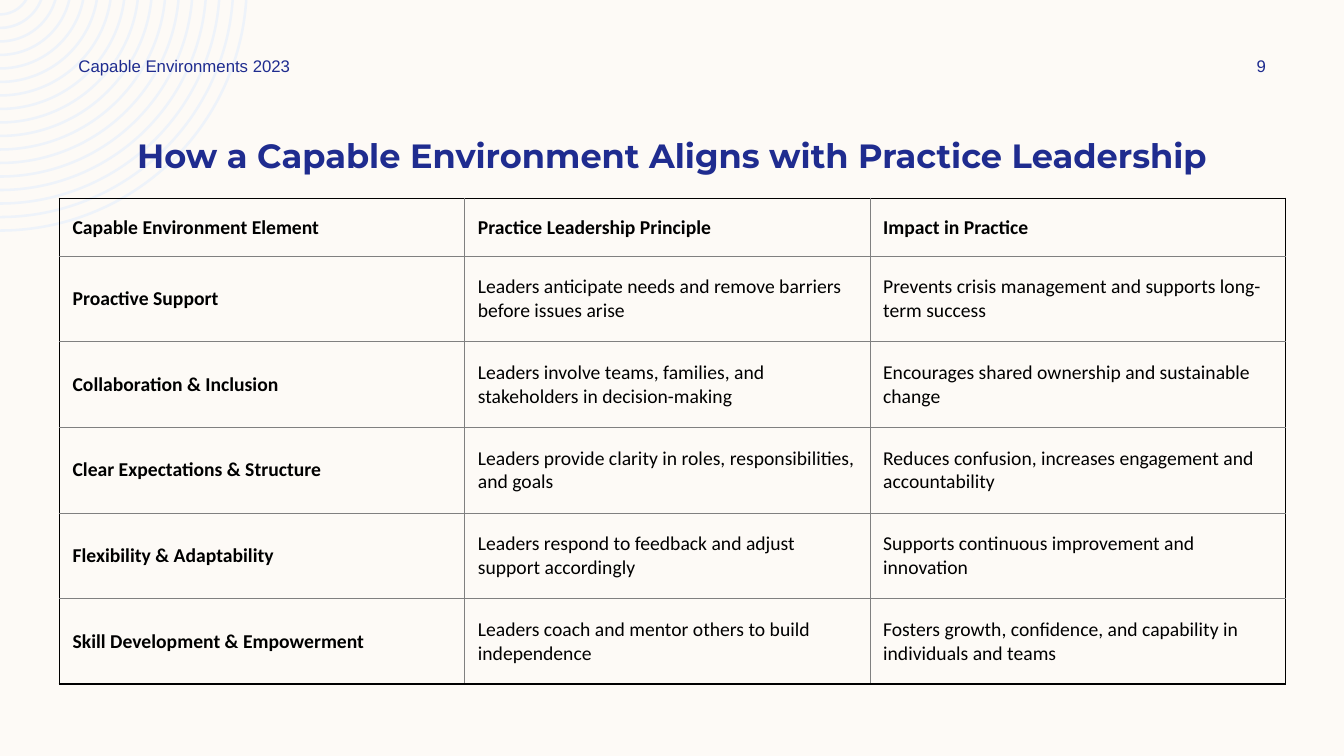
import math

import pptx
import pptx.dml.color
import pptx.enum.text
import pptx.oxml
import pptx.oxml.ns
import pptx.util

Inches = pptx.util.Inches
Pt = pptx.util.Pt
ALIGN = pptx.enum.text.PP_ALIGN
ANCHOR = pptx.enum.text.MSO_ANCHOR
NS = pptx.oxml.ns.nsdecls("a")

COLS = [4.02, 4.02, 4.12]
ROWS = [0.57] + [0.85] * 5
CONTENT = [
    ("Capable Environment Element", "Practice Leadership Principle", "Impact in Practice"),
    ("Proactive Support",
     "Leaders anticipate needs and remove barriers before issues arise",
     "Prevents crisis management and supports long-term success"),
    ("Collaboration & Inclusion",
     "Leaders involve teams, families, and stakeholders in decision-making",
     "Encourages shared ownership and sustainable change"),
    ("Clear Expectations & Structure",
     "Leaders provide clarity in roles, responsibilities, and goals",
     "Reduces confusion, increases engagement and accountability"),
    ("Flexibility & Adaptability",
     "Leaders respond to feedback and adjust support accordingly",
     "Supports continuous improvement and innovation"),
    ("Skill Development & Empowerment",
     "Leaders coach and mentor others to build independence",
     "Fosters growth, confidence, and capability in individuals and teams"),
]


def rgb(value):
    return pptx.dml.color.RGBColor.from_string(value)


class Deck:
    NAVY, CREAM, PALE, BLACK, GREY = "1F2C8F", "FDFAF6", "EEF3FA", "000000", "808080"

    def __init__(self):
        self.prs = pptx.Presentation()
        self.prs.slide_width = Inches(13.33)
        self.prs.slide_height = Inches(7.5)
        self.s = self.prs.slides.add_slide(self.prs.slide_layouts[6])
        fill = self.s.background.fill
        fill.solid()
        fill.fore_color.rgb = rgb(self.CREAM)

    def run(self, p, text, size, font, color, bold=False):
        r = p.add_run()
        r.text = text
        r.font.size = Pt(size)
        r.font.name = font
        r.font.bold = bold
        r.font.color.rgb = rgb(color)

    def text(self, box, text, size, font, align=ALIGN.LEFT, anchor=ANCHOR.MIDDLE,
             bold=False, spacing=1.0, after=0):
        tf = self.s.shapes.add_textbox(*map(Inches, box)).text_frame
        tf.word_wrap = True
        tf.vertical_anchor = anchor
        p = tf.paragraphs[0]
        p.alignment = align
        p.line_spacing = spacing
        p.space_after = Pt(after)
        self.run(p, text, size, font, self.NAVY, bold)

    def rings(self, rise, outer, step, width, count):
        """Draw concentric bands centred above the corner, cut at the slide edges."""
        builder, arcs = None, []
        for i in range(count):
            radii = outer - i * step, outer - i * step - width
            (x1, y1), (x2, y2) = [(Inches(math.sqrt(r * r - rise * rise)), Inches(r - rise))
                                  for r in radii]
            if builder is None:
                builder = self.s.shapes.build_freeform(x1, 0)
            else:
                builder.move_to(x1, 0)
            builder.add_line_segments([(0, y1), (0, y2), (x2, 0)], close=True)
            first, last = [math.degrees(math.asin(rise / r)) for r in radii]
            arcs += [(radii[0], first, 90 - first), None, (radii[1], 90, last - 90)]
        sp = builder.convert_to_shape()
        lines = list(sp._element.iter(pptx.oxml.ns.qn("a:lnTo")))
        for line, arc in zip(lines, arcs):
            if arc:
                radius, start, sweep = arc
                line.getparent().replace(line, pptx.oxml.parse_xml(
                    f'<a:arcTo {NS} wR="{Inches(radius)}" hR="{Inches(radius)}" '
                    f'stAng="{round(start * 60000)}" swAng="{round(sweep * 60000)}"/>'))
        sp.shadow.inherit = False
        sp.fill.solid()
        sp.fill.fore_color.rgb = rgb(self.PALE)
        sp.line.fill.background()

    def border(self, cell, side, outside):
        color, width = (self.BLACK, 1.5) if outside else (self.GREY, 0.5)
        cell._tc.get_or_add_tcPr().append(pptx.oxml.parse_xml(
            f'<a:ln{side} {NS} w="{Pt(width)}">'
            f'<a:solidFill><a:srgbClr val="{color}"/></a:solidFill></a:ln{side}>'))

    def table(self, left, top, cols, rows, content):
        frame = self.s.shapes.add_table(len(rows), len(cols), Inches(left), Inches(top),
                                        Inches(sum(cols)), Inches(sum(rows)))
        table = frame.table
        table.first_row = table.horz_banding = False
        for column, width in zip(table.columns, cols):
            column.width = Inches(width)
        for row, height in zip(table.rows, rows):
            row.height = Inches(height)
        for i, texts in enumerate(content):
            for j, text in enumerate(texts):
                cell = table.cell(i, j)
                cell.vertical_anchor = ANCHOR.MIDDLE
                cell.margin_left = Inches(0.13)
                cell.margin_top = cell.margin_right = cell.margin_bottom = Inches(0.1)
                self.run(cell.text_frame.paragraphs[0], text, 14, "Calibri", self.BLACK,
                         bold=i == 0 or j == 0)
                for side, outside in (("L", j == 0), ("R", j == len(cols) - 1),
                                      ("T", i == 0), ("B", i == len(rows) - 1)):
                    self.border(cell, side, outside)
                cell.fill.background()


def main():
    deck = Deck()
    deck.rings(rise=0.16, outer=2.46, step=0.134, width=0.025, count=17)
    deck.text((0.83, 1.33, 11.67, 0.84),
              "How a Capable Environment Aligns with Practice Leadership", 24, "Montserrat",
              ALIGN.CENTER, ANCHOR.TOP, bold=True, spacing=0.9)
    deck.text((0.68, 0.5, 3.5, 0.3), "Capable Environments 2023", 12, "Arial", after=6)
    deck.text((11.97, 0.5, 1.08, 0.3), "9", 12, "Arial", ALIGN.CENTER, after=6)
    deck.table(0.59, 1.97, COLS, ROWS, CONTENT)
    deck.prs.save("out.pptx")


if __name__ == "__main__":
    main()
